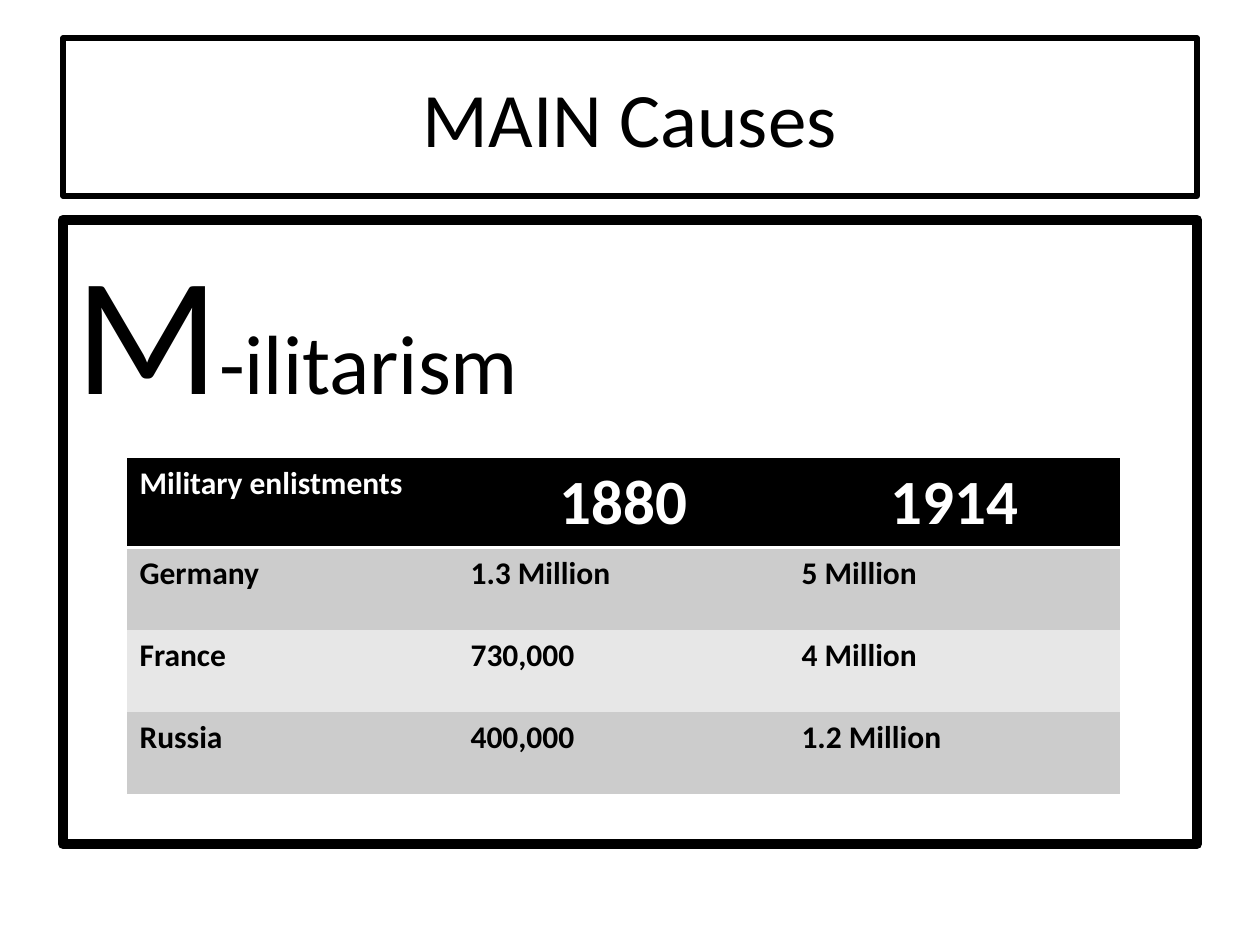
from dataclasses import dataclass
from lxml.etree import SubElement
from pptx import Presentation
from pptx.dml.color import RGBColor
from pptx.enum.shapes import MSO_SHAPE
from pptx.enum.text import MSO_ANCHOR, PP_ALIGN
from pptx.oxml import parse_xml
from pptx.oxml.ns import qn
from pptx.util import Emu, Pt

SCALE = 914400 / 126
PLAIN = "{2D5ABB26-0587-4C30-8999-92F81FD0307C}"
NS = "http://schemas.openxmlformats.org/drawingml/2006/main"


@dataclass
class Theme:
    font: str = "Calibri"
    black: str = "000000"
    white: str = "FFFFFF"
    bands: tuple = ("CCCCCC", "E7E7E7")
    head: int = 44
    drop: int = 96
    lead: int = 48
    year: int = 36
    cell: int = 18


def px(n):
    return Emu(round(n * SCALE))


def rgb(code):
    return RGBColor.from_string(code)


def write(para, text, *, font, size, color, bold=False, align=PP_ALIGN.LEFT):
    para.alignment = align
    run = para.add_run()
    run.text = text
    face = run.font
    face.name, face.size, face.bold = font, Pt(size), bold
    face.color.rgb = rgb(color)


class Deck:
    def __init__(self, theme):
        self.theme = theme
        self.file = Presentation()
        self.file.slide_width, self.file.slide_height = px(1260), px(945)
        self.slide = self.file.slides.add_slide(self.file.slide_layouts[5])

    def text(self, para, text, size, color=None, **kind):
        write(para, text, font=self.theme.font, size=size,
              color=color or self.theme.black, **kind)

    def frame(self, shape, width):
        shape.line.color.rgb = rgb(self.theme.black)
        shape.line.width = Pt(width)

    def title(self, text, x, y, w, h):
        shape = self.slide.shapes.title
        shape.left, shape.top, shape.width, shape.height = map(px, (x, y, w, h))
        self.frame(shape, 3)
        shape.text_frame.vertical_anchor = MSO_ANCHOR.MIDDLE
        self.text(shape.text_frame.paragraphs[0], text, self.theme.head,
                  align=PP_ALIGN.CENTER)

    def panel(self, parts, x, y, w, h):
        shape = self.slide.shapes.add_shape(MSO_SHAPE.RECTANGLE, *map(px, (x, y, w, h)))
        shape.shadow.inherit = False
        shape.fill.background()
        self.frame(shape, 6)
        body = shape.text_frame
        body.word_wrap = True
        body.vertical_anchor = MSO_ANCHOR.TOP
        para = body.paragraphs[0]
        para.space_before = Pt(5)
        props = para._p.get_or_add_pPr()
        props.set("marL", str(px(48)))
        props.set("indent", str(-px(48)))
        for text, size in parts:
            self.text(para, text, size)

    def rule(self, cell):
        props = cell._tc.get_or_add_tcPr()
        line = parse_xml(f'<a:lnB xmlns:a="{NS}" w="{Pt(2)}"/>')
        fill = SubElement(line, qn("a:solidFill"))
        SubElement(fill, qn("a:srgbClr"), val=self.theme.white)
        props.insert(0, line)

    def table(self, rows, x, y, w, sizes):
        look = self.theme
        grid = self.slide.shapes.add_table(
            len(rows), len(rows[0]), px(x), px(y), px(w), px(sum(sizes))).table
        grid._tbl.tblPr.find(qn("a:tableStyleId")).text = PLAIN
        for i, (row, size) in enumerate(zip(rows, sizes)):
            grid.rows[i].height = px(size)
            for j, text in enumerate(row):
                cell = grid.cell(i, j)
                head, year = i == 0, i == 0 and j > 0
                cell.fill.solid()
                cell.fill.fore_color.rgb = rgb(look.black if head else look.bands[(i - 1) % 2])
                self.text(cell.text_frame.paragraphs[0], text,
                          look.year if year else look.cell,
                          look.white if head else look.black, bold=True,
                          align=PP_ALIGN.CENTER if year else PP_ALIGN.LEFT)
                if head:
                    self.rule(cell)

    def save(self):
        self.file.save("out.pptx")


def main():
    theme = Theme()
    deck = Deck(theme)
    deck.title("MAIN Causes", 63, 38, 1134, 158)
    deck.panel([("M", theme.drop), ("-ilitarism", theme.lead)], 63, 220, 1134, 624)
    deck.table([
        ("Military enlistments", "1880", "1914"),
        ("Germany", "1.3 Million", "5 Million"),
        ("France", "730,000", "4 Million"),
        ("Russia", "400,000", "1.2 Million"),
    ], 127, 458, 993, (89, 82, 82, 82))
    deck.save()


if __name__ == "__main__":
    main()
